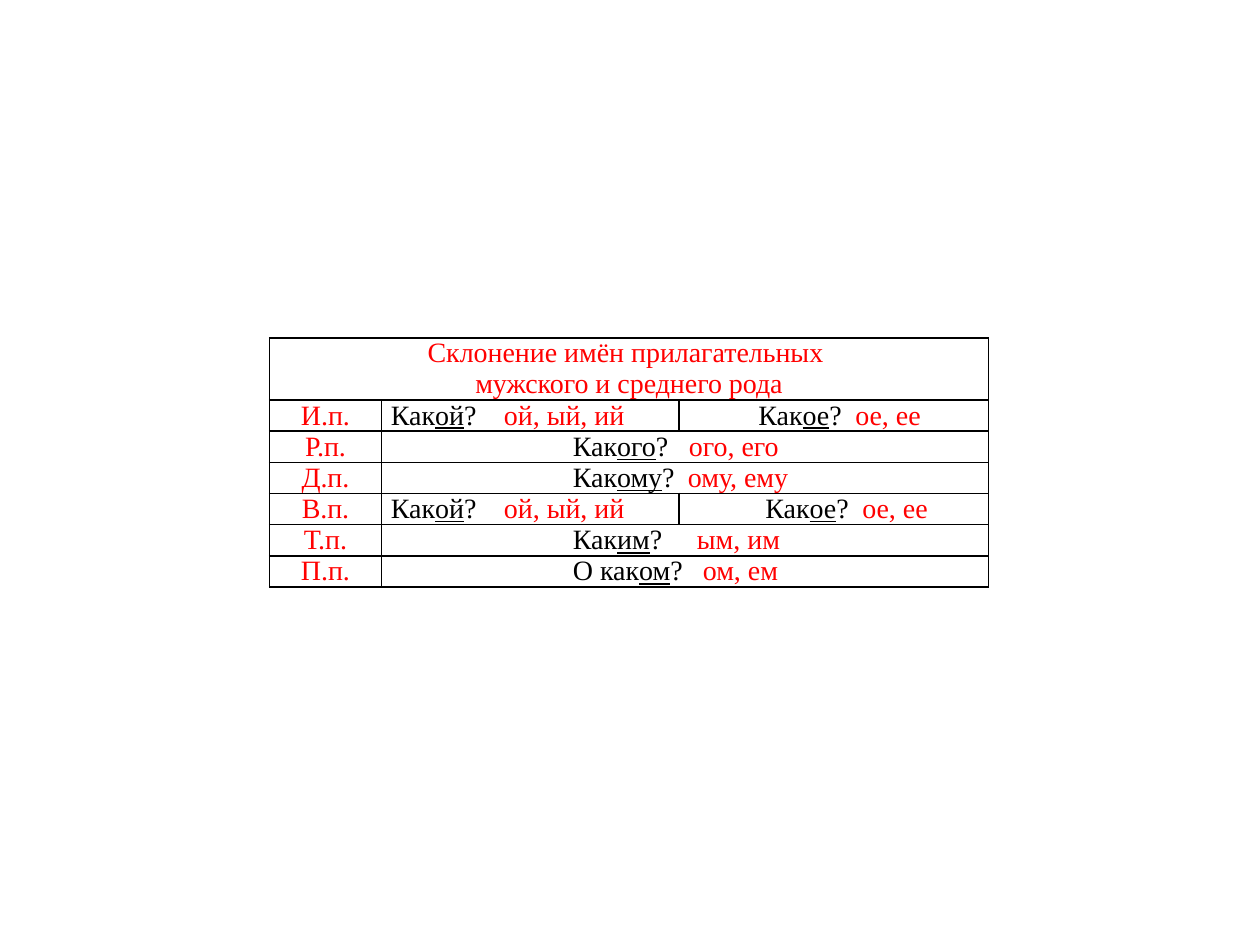
from dataclasses import dataclass

from lxml import etree
from pptx import Presentation
from pptx.dml.color import RGBColor
from pptx.enum import text
from pptx.oxml import ns
from pptx.util import Pt


@dataclass(frozen=True)
class Theme:
    font: str = "Times New Roman"
    size: float = 16
    ink: str = "000000"
    accent: str = "FF0000"
    border: float = 1
    side_margin: float = 5.4


THEME = Theme()
COLUMNS = (64, 170, 177)
LINE_HEIGHT = 17.8
TITLE = ("Склонение имён прилагательных ", "мужского и среднего рода")
WIDE = 104  # indent of a question that serves both genders

# Case, then its questions: indent, stem, underlined ending, tab stop, endings
CASES = (
    ("И.п.", ((0, "Как", "ой", 64.6, "ой, ый, ий"),
              (40, "Как", "ое", 55.4, "ое, ее"))),
    ("Р.п.", ((WIDE, "Как", "ого", 66.3, "ого, его"),)),
    ("Д.п.", ((WIDE, "Как", "ому", 65.7, "ому, ему"),)),
    ("В.п.", ((0, "Как", "ой", 64.6, "ой, ый, ий"),
              (44, "Как", "ое", 55.4, "ое, ее"))),
    ("Т.п.", ((WIDE, "Как", "им", 70.9, "ым, им"),)),
    ("П.п.", ((WIDE, "О как", "ом", 74.3, "ом, ем"),)),
)


def add_span(para, wording, color, underline=False):
    span = para.add_run()
    span.text = wording
    span.font.name = THEME.font
    span.font.size = Pt(THEME.size)
    span.font.color.rgb = RGBColor.from_string(color)
    span.font.underline = underline


def add_tab_stop(para, position):
    properties = para._p.get_or_add_pPr()
    stops = etree.SubElement(properties, ns.qn("a:tabLst"))
    etree.SubElement(stops, ns.qn("a:tab"), pos=str(Pt(position)), algn="l")


def style_cell(cell):
    """Give a cell tight margins, no fill and a line on every side."""
    cell.margin_left = cell.margin_right = Pt(THEME.side_margin)
    cell.margin_top = cell.margin_bottom = Pt(0)
    cell.fill.background()
    properties = cell._tc.get_or_add_tcPr()
    for order, side in enumerate(("lnL", "lnR", "lnT", "lnB")):
        line = etree.Element(ns.qn(f"a:{side}"), w=str(Pt(THEME.border)))
        fill = etree.SubElement(line, ns.qn("a:solidFill"))
        etree.SubElement(fill, ns.qn("a:srgbClr"), val=THEME.ink)
        properties.insert(order, line)


def write_heading(cell, lines):
    """Write centred accent lines, one paragraph each."""
    frame = cell.text_frame
    for number, line in enumerate(lines):
        para = frame.add_paragraph() if number else frame.paragraphs[0]
        para.alignment = text.PP_ALIGN.CENTER
        add_span(para, line, THEME.accent)


def write_question(cell, indent, stem, ending, tab_stop, endings):
    cell.margin_left = Pt(THEME.side_margin + indent)
    para = cell.text_frame.paragraphs[0]
    para.alignment = text.PP_ALIGN.LEFT
    add_tab_stop(para, tab_stop)
    add_span(para, stem, THEME.ink)
    add_span(para, ending, THEME.ink, underline=True)
    add_span(para, "?\t", THEME.ink)
    add_span(para, endings, THEME.accent)


def add_declension_table(page):
    line_counts = [len(TITLE)] + [1] * len(CASES)
    frame = page.shapes.add_table(
        len(line_counts), len(COLUMNS), Pt(154), Pt(193),
        Pt(sum(COLUMNS)), Pt(LINE_HEIGHT * sum(line_counts)))
    table = frame.table
    table.first_row = table.horz_banding = False
    for column, width in zip(table.columns, COLUMNS):
        column.width = Pt(width)
    for row, count in zip(table.rows, line_counts):
        row.height = Pt(LINE_HEIGHT * count)
    for cell in table.iter_cells():
        style_cell(cell)
        cell.text_frame.paragraphs[0].font.size = Pt(THEME.size)

    table.cell(0, 0).merge(table.cell(0, 2))
    write_heading(table.cell(0, 0), TITLE)
    for row, (case, questions) in enumerate(CASES, start=1):
        write_heading(table.cell(row, 0), [case])
        if len(questions) == 1:
            table.cell(row, 1).merge(table.cell(row, 2))
        for column, question in enumerate(questions, start=1):
            write_question(table.cell(row, column), *question)


def main():
    deck = Presentation()
    deck.slide_width, deck.slide_height = Pt(720), Pt(540)
    page = deck.slides.add_slide(deck.slide_layouts[6])
    add_declension_table(page)
    deck.save("out.pptx")


if __name__ == "__main__":
    main()
